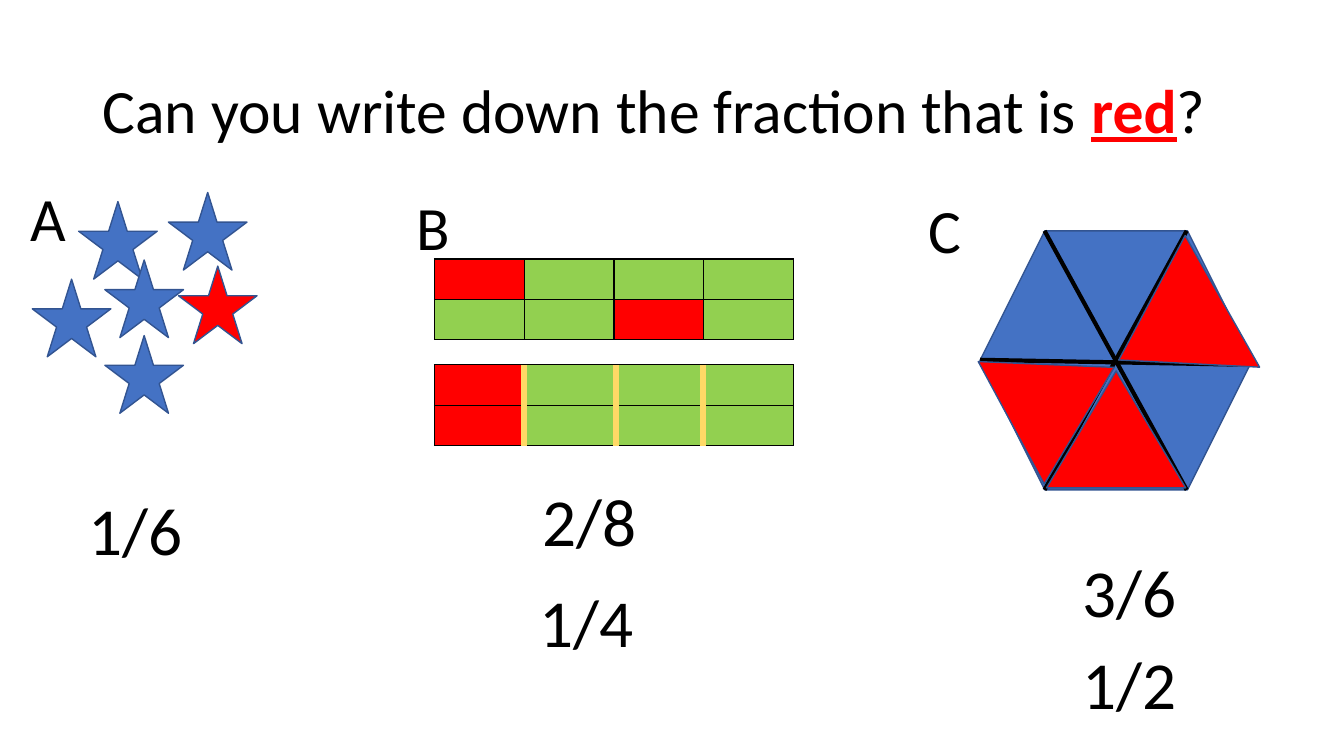
"""Builds a slide asking which fraction of each figure is red."""
from lxml import etree
from pptx import Presentation
from pptx.dml.color import RGBColor
from pptx.enum.shapes import MSO_CONNECTOR as Connector, MSO_SHAPE as Shape
from pptx.enum.text import MSO_ANCHOR as Anchor, MSO_AUTO_SIZE as AutoSize
from pptx.oxml.ns import qn
from pptx.util import Inches, Pt

COLORS = {
    "text": "000000",
    "red": "FF0000",
    "blue": "4472C4",
    "outline": "325491",
    "green": "92D050",
    "divider": "FFD966",
}


class FractionSlide:
    """Holds the style and the slide that is being filled."""

    font_name = "Calibri"

    def __init__(self, presentation):
        self.slide = presentation.slides.add_slide(presentation.slide_layouts[6])
        self.shapes = self.slide.shapes

    def color(self, name):
        return RGBColor.from_string(COLORS[name])

    def format_run(self, run, size):
        run.font.name = self.font_name
        run.font.size = Pt(size)
        run.font.color.rgb = self.color("text")

    def text(self, text, left, top, width, height, size):
        box = self.shapes.add_textbox(*map(Inches, (left, top, width, height)))
        frame = box.text_frame
        frame.text = text
        frame.word_wrap = True
        frame.auto_size = AutoSize.SHAPE_TO_FIT_TEXT
        self.format_run(frame.paragraphs[0].runs[0], size)

    def title(self, parts, emphasis, left, top, width, height):
        box = self.shapes.add_textbox(*map(Inches, (left, top, width, height)))
        frame = box.text_frame
        frame.word_wrap = True
        frame.vertical_anchor = Anchor.MIDDLE
        paragraph = frame.paragraphs[0]
        paragraph.line_spacing = 0.9
        for part in parts:
            run = paragraph.add_run()
            run.text = part
            self.format_run(run, 44)
            if part == emphasis:
                run.font.bold = run.font.underline = True
                run.font.color.rgb = self.color("red")

    def shape(self, kind, fill, left, top, width, height, rotation=0):
        shape = self.shapes.add_shape(kind, *map(Inches, (left, top, width, height)))
        shape.shadow.inherit = False
        shape.rotation = rotation
        shape.fill.solid()
        shape.fill.fore_color.rgb = self.color(fill)
        shape.line.color.rgb = self.color("outline")
        shape.line.width = Pt(1)

    def line(self, start, end, color, width):
        line = self.shapes.add_connector(
            Connector.STRAIGHT, *map(Inches, (*start, *end)))
        line.line.color.rgb = self.color(color)
        line.line.width = Pt(width)
        etree.SubElement(line._element.spPr, qn("a:effectLst"))

    def border(self, cell):
        properties = cell._tc.get_or_add_tcPr()
        for side in ("lnL", "lnR", "lnT", "lnB"):
            edge = etree.SubElement(properties, qn(f"a:{side}"), w=str(Pt(1)))
            fill = etree.SubElement(edge, qn("a:solidFill"))
            etree.SubElement(fill, qn("a:srgbClr"), val=COLORS["text"])

    def grid(self, red_cells, left, top, rows=2, columns=4):
        frame = self.shapes.add_table(
            rows, columns, Inches(left), Inches(top),
            Inches(0.89 * columns), Inches(0.4 * rows))
        table = frame.table
        table.first_row = table.horz_banding = False
        for row in range(rows):
            for column in range(columns):
                cell = table.cell(row, column)
                self.border(cell)
                cell.fill.solid()
                name = "red" if (row, column) in red_cells else "green"
                cell.fill.fore_color.rgb = self.color(name)


def main():
    presentation = Presentation()
    presentation.slide_width = Inches(13.33)
    presentation.slide_height = Inches(7.5)
    page = FractionSlide(presentation)

    page.title(("Can you write down the fraction that is ", "red", "?"), "red",
               0.92, 0.4, 11.5, 1.45)

    stars = [(0.78, 2, "blue"), (1.04, 2.58, "blue"), (1.77, 2.64, "red"),
             (1.67, 1.91, "blue"), (0.32, 2.77, "blue"), (1.04, 3.33, "blue")]
    for left, top, fill in stars:
        page.shape(Shape.STAR_5_POINT, fill, left, top, 0.78, 0.77)

    for letter, left, top in [("A", 0.2, 1.74), ("B", 4.03, 1.83), ("C", 9.11, 1.86)]:
        page.text(letter, left, top, 0.78, 0.84, 44)

    page.grid({(0, 0), (1, 2)}, 4.31, 2.57)
    page.grid({(0, 0), (1, 0)}, 4.31, 3.62)
    for x in (5.2, 6.11, 6.97):
        page.line((x, 3.62), (x, 4.42), "divider", 4.5)

    page.shape(Shape.HEXAGON, "blue", 9.72, 2.29, 2.7, 2.57)
    diagonals = [((11.77, 4.86), (10.36, 2.29)),
                 ((12.42, 3.62), (9.72, 3.57)),
                 ((10.36, 4.86), (11.77, 2.29))]
    for start, end in diagonals:
        page.line(start, end, "text", 3)
    red_triangles = [(9.85, 3.34, 1.38, 1.16, 61.7),
                     (10.38, 3.68, 1.38, 1.16, 0),
                     (10.86, 2.69, 1.5, 1.18, 240.5)]
    for triangle in red_triangles:
        page.shape(Shape.ISOSCELES_TRIANGLE, "red", *triangle)

    answers = [("1/6", 0.78, 4.8), ("2/8", 5.28, 4.71), ("1/4", 5.25, 5.71),
               ("3/6", 10.64, 5.41), ("1/2", 10.64, 6.32)]
    for answer, left, top in answers:
        page.text(answer, left, top, 1.3, 0.91, 48)

    presentation.save("out.pptx")


if __name__ == "__main__":
    main()
